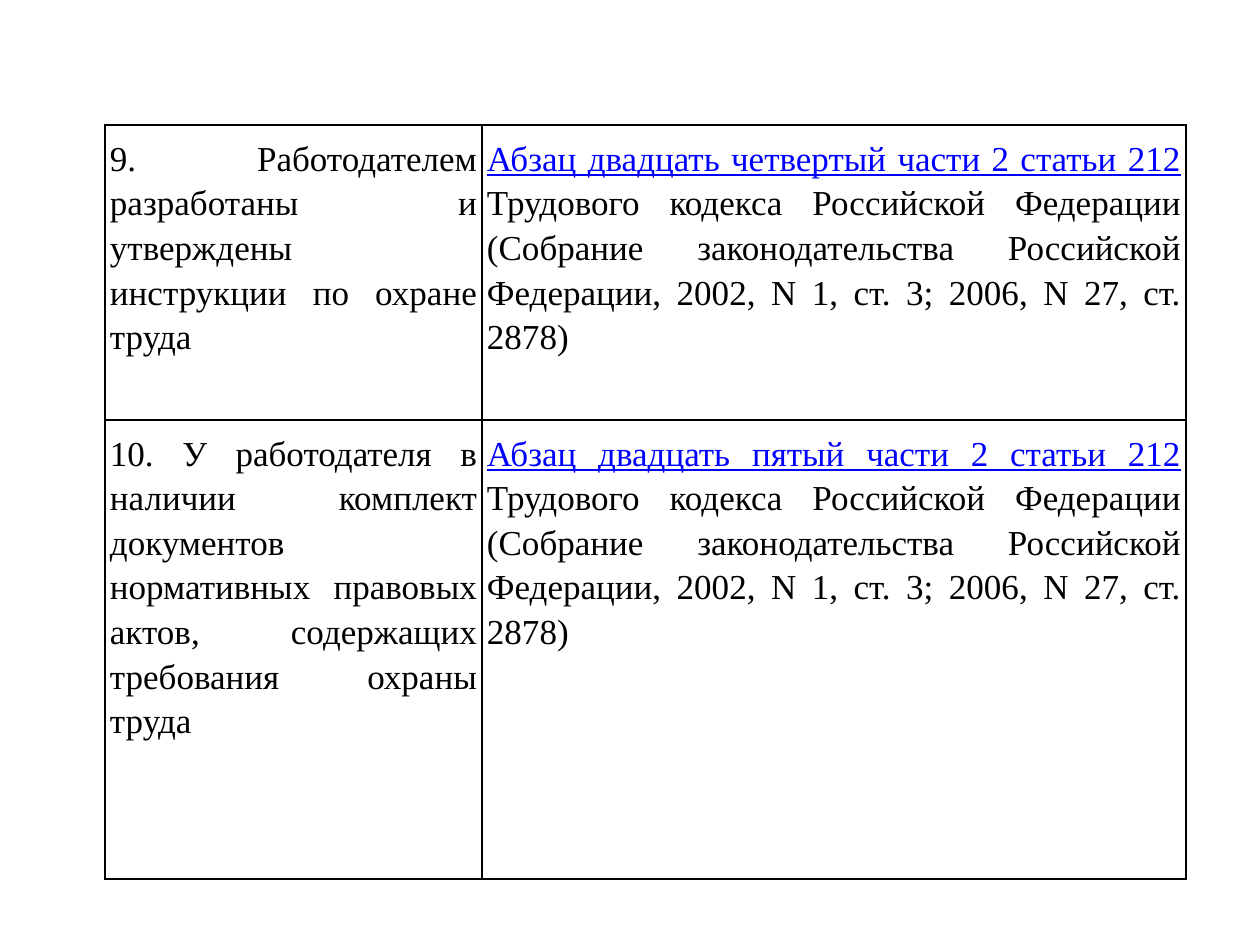
from dataclasses import dataclass

from lxml import etree
from pptx import Presentation
from pptx import util as u
from pptx.dml.color import RGBColor
from pptx.enum import text
from pptx.oxml.ns import qn


@dataclass(frozen=True)
class Theme:
    font: str = "Times New Roman"
    size: int = 20
    line_spacing: float = 1.15
    ink: str = "000000"
    reference: str = "0000FF"
    border: int = 1


THEME = Theme()
PX_PER_INCH = 126
SLIDE = (1260, 945)
TABLE_BOX = (105, 125, 1081, 754)
COLUMN_WIDTHS = (377, 704)
ROW_HEIGHTS = (295, 459)
PAD_X, PAD_Y = 5, 9

LABOUR_CODE = (" Трудового кодекса Российской Федерации (Собрание законодательства "
               "Российской Федерации, 2002, N 1, ст. 3; 2006, N 27, ст. 2878)")
REQUIREMENTS = [
    ("9. Работодателем разработаны и утверждены инструкции по охране труда",
     "Абзац двадцать четвертый части 2 статьи 212"),
    ("10. У работодателя в наличии комплект документов нормативных правовых "
     "актов, содержащих требования охраны труда",
     "Абзац двадцать пятый части 2 статьи 212"),
]


def px(length):
    return u.Emu(round(length * u.Inches(1) / PX_PER_INCH))


def add_borders(cell):
    """Draw a line on each side; the lines must precede the cell's fill."""
    properties = cell._tc.get_or_add_tcPr()
    for index, side in enumerate(("a:lnL", "a:lnR", "a:lnT", "a:lnB")):
        line = etree.Element(qn(side), w=str(u.Pt(THEME.border)))
        fill = etree.SubElement(line, qn("a:solidFill"))
        etree.SubElement(fill, qn("a:srgbClr"), val=THEME.ink)
        properties.insert(index, line)


def fill_cell(cell, pieces):
    """Write justified text from (wording, is_reference) pieces."""
    cell.fill.background()
    cell.margin_left = cell.margin_right = px(PAD_X)
    cell.margin_top = cell.margin_bottom = px(PAD_Y)
    add_borders(cell)
    paragraph = cell.text_frame.paragraphs[0]
    paragraph.alignment = text.PP_ALIGN.JUSTIFY
    paragraph.line_spacing = THEME.line_spacing
    for wording, is_reference in pieces:
        run = paragraph.add_run()
        run.text = wording
        run.font.name = THEME.font
        run.font.size = u.Pt(THEME.size)
        run.font.underline = is_reference
        color = THEME.reference if is_reference else THEME.ink
        run.font.color.rgb = RGBColor.from_string(color)


def add_requirements_table(slide, box):
    frame = slide.shapes.add_table(len(REQUIREMENTS), len(COLUMN_WIDTHS), *map(px, box))
    requirements = frame.table
    requirements.first_row = requirements.horz_banding = False
    for column, width in zip(requirements.columns, COLUMN_WIDTHS):
        column.width = px(width)
    for row, height in zip(requirements.rows, ROW_HEIGHTS):
        row.height = px(height)

    # Requirement on the left, its legal basis on the right
    for row, (requirement, article) in zip(requirements.rows, REQUIREMENTS):
        fill_cell(row.cells[0], [(requirement, False)])
        fill_cell(row.cells[1], [(article, True), (LABOUR_CODE, False)])


def main():
    deck = Presentation()
    deck.slide_width, deck.slide_height = map(px, SLIDE)
    slide = deck.slides.add_slide(deck.slide_layouts[6])
    add_requirements_table(slide, TABLE_BOX)
    deck.save("out.pptx")


if __name__ == "__main__":
    main()
